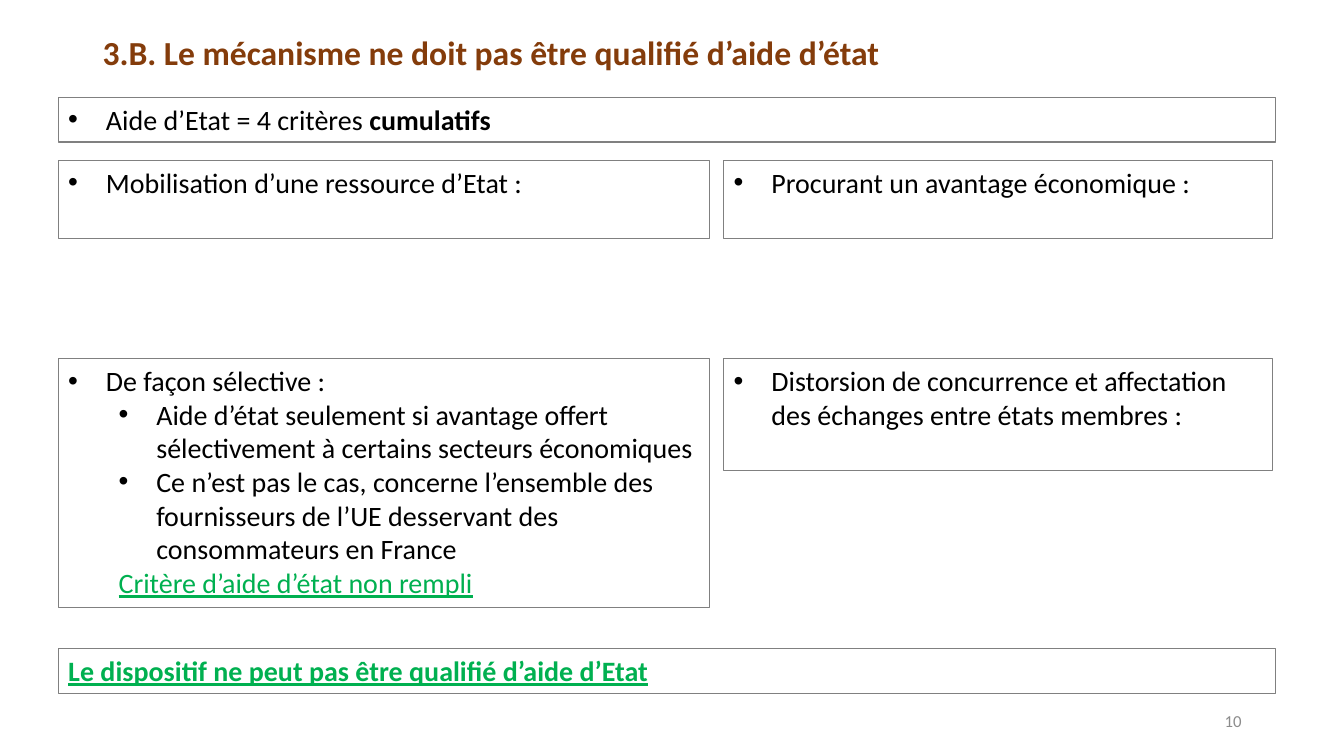
from dataclasses import dataclass

from lxml.etree import SubElement
from pptx import Presentation
from pptx.dml.color import RGBColor
from pptx.enum.shapes import MSO_SHAPE as Preset
from pptx.enum.text import MSO_ANCHOR as Anchor, MSO_AUTO_SIZE as AutoSize, PP_ALIGN as Align
from pptx.oxml.ns import qn
from pptx.slide import Slide
from pptx.text.text import Font, _Paragraph as Paragraph
from pptx.util import Cm, Pt

COLORS = {
    "title": "843C0B",
    "text": "000000",
    "verdict": "00B050",
    "border": "808080",
    "number": "8C8C8C",
}
FONT = "Calibri"
LEFT, RIGHT = 1.47, 18.24
LEFT_WIDTH, RIGHT_WIDTH, FULL_WIDTH = 16.41, 13.84, 30.68
TOP_ROW, BOTTOM_ROW = 4.04, 9.04
HANGING = 0.95


@dataclass(frozen=True)
class Item:
    text: str
    bold_end: str = ""
    level: int = 0
    bullet: bool = True
    verdict: bool = False
    bold: bool = False


@dataclass(frozen=True)
class Panel:
    left: float
    top: float
    width: float
    height: float
    items: tuple[Item, ...]


PANELS = (
    Panel(LEFT, 2.46, FULL_WIDTH, 1.12, (Item("Aide d’Etat = 4 critères ", bold_end="cumulatifs"),)),
    Panel(LEFT, TOP_ROW, LEFT_WIDTH, 1.96, (Item("Mobilisation d’une ressource d’Etat :"),)),
    Panel(RIGHT, TOP_ROW, RIGHT_WIDTH, 1.96, (Item("Procurant un avantage économique :"),)),
    Panel(LEFT, BOTTOM_ROW, LEFT_WIDTH, 6.26, (
        Item("De façon sélective :"),
        Item("Aide d’état seulement si avantage offert sélectivement à certains secteurs économiques", level=1),
        Item("Ce n’est pas le cas, concerne l’ensemble des fournisseurs de l’UE desservant des "
             "consommateurs en France", level=1),
        Item("Critère d’aide d’état non rempli", level=1, bullet=False, verdict=True),
    )),
    Panel(RIGHT, BOTTOM_ROW, RIGHT_WIDTH, 2.82, (
        Item("Distorsion de concurrence et affectation des échanges entre états membres :"),
    )),
    Panel(LEFT, 16.35, FULL_WIDTH, 1.12, (
        Item("Le dispositif ne peut pas être qualifié d’aide d’Etat", bullet=False, verdict=True, bold=True),
    )),
)


def set_font(font: Font, size: int, color: str) -> None:
    font.name = FONT
    font.size = Pt(size)
    font.color.rgb = RGBColor.from_string(COLORS[color])


def set_indent(para: Paragraph, item: Item) -> None:
    hanging = HANGING if item.bullet else 0
    properties = para._p.get_or_add_pPr()
    properties.set("marL", str(Cm(1.27 * item.level + hanging)))
    properties.set("indent", str(Cm(-hanging)))
    if item.bullet:
        SubElement(properties, qn("a:buFont")).set("typeface", "Arial")
        SubElement(properties, qn("a:buChar")).set("char", "•")
    else:
        SubElement(properties, qn("a:buNone"))


def write_item(para: Paragraph, item: Item) -> None:
    para.alignment = Align.LEFT
    para.level = item.level
    set_indent(para, item)
    set_font(para.font, 20, "verdict" if item.verdict else "text")
    para.font.underline = item.verdict
    para.font.bold = item.bold
    para.add_run().text = item.text
    if item.bold_end:
        span = para.add_run()
        span.text = item.bold_end
        set_font(span.font, 20, "text")
        span.font.bold = True


def draw_panel(page: Slide, panel: Panel) -> None:
    box = page.shapes.add_shape(
        Preset.RECTANGLE, Cm(panel.left), Cm(panel.top), Cm(panel.width), Cm(panel.height))
    box.shadow.inherit = False
    box.fill.background()
    box.line.color.rgb = RGBColor.from_string(COLORS["border"])
    box.line.width = Pt(0.75)
    frame = box.text_frame
    frame.word_wrap = True
    frame.vertical_anchor = Anchor.TOP
    for index, item in enumerate(panel.items):
        write_item(frame.add_paragraph() if index else frame.paragraphs[0], item)


def draw_title(page: Slide) -> None:
    title = page.shapes.title
    title.left, title.top, title.width, title.height = Cm(2.33), Cm(0.46), Cm(29.21), Cm(1.85)
    frame = title.text_frame
    frame.text = "3.B. Le mécanisme ne doit pas être qualifié d’aide d’état"
    frame.word_wrap = True
    frame.auto_size = AutoSize.NONE
    frame.vertical_anchor = Anchor.MIDDLE
    para = frame.paragraphs[0]
    para.alignment = Align.LEFT
    para.line_spacing = 0.9
    set_font(para.font, 24, "title")
    para.font.bold = True


def draw_number(page: Slide) -> None:
    box = page.shapes.add_textbox(Cm(23.92), Cm(17.65), Cm(7.62), Cm(1.02))
    frame = box.text_frame
    frame.text = "10"
    frame.word_wrap = True
    frame.vertical_anchor = Anchor.MIDDLE
    para = frame.paragraphs[0]
    para.alignment = Align.RIGHT
    set_font(para.font, 12, "number")


def main() -> None:
    deck = Presentation()
    deck.slide_width, deck.slide_height = Cm(33.87), Cm(19.05)
    page = deck.slides.add_slide(deck.slide_layouts.get_by_name("Title Only"))
    draw_title(page)
    for panel in PANELS:
        draw_panel(page, panel)
    draw_number(page)
    deck.save("out.pptx")


if __name__ == "__main__":
    main()
